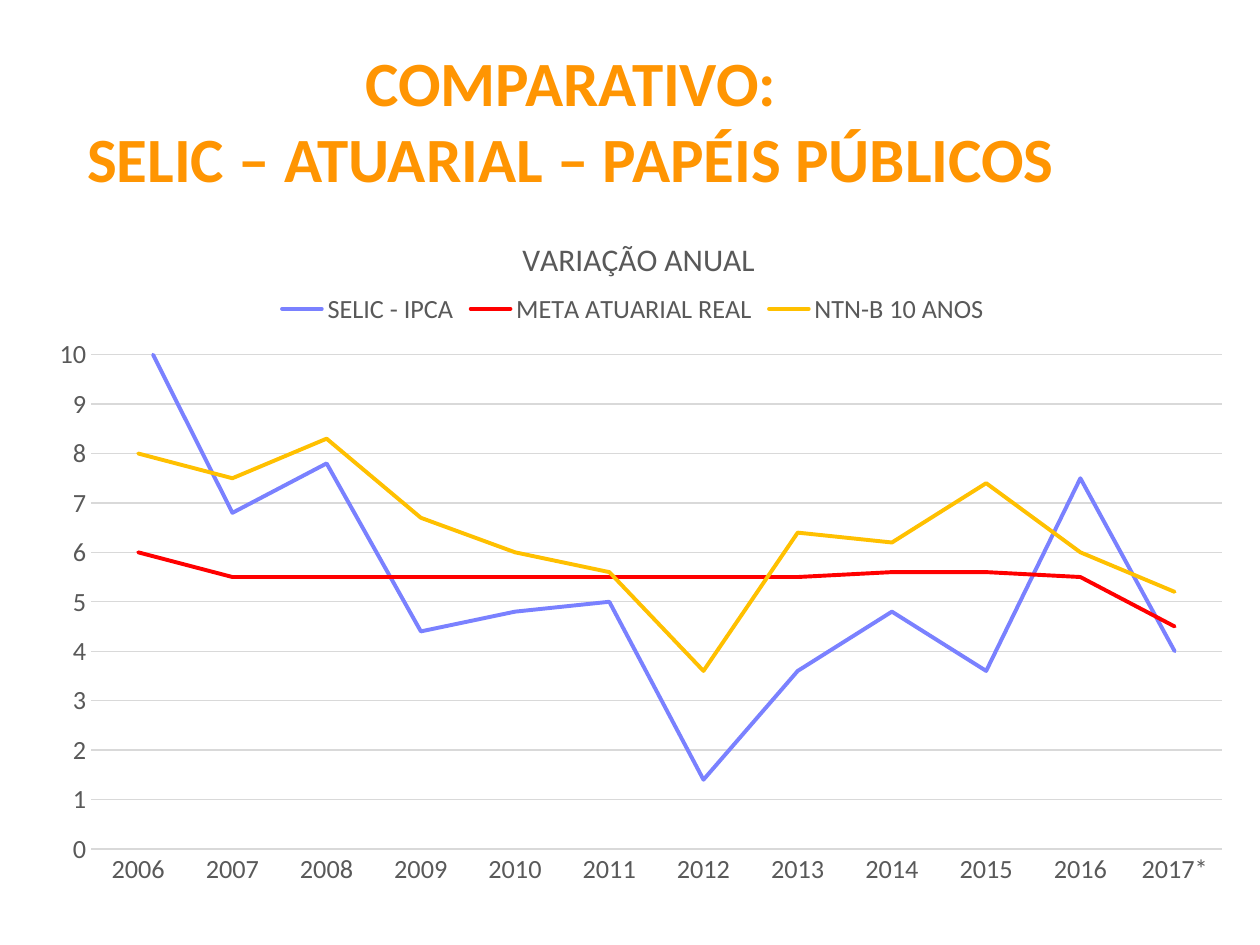
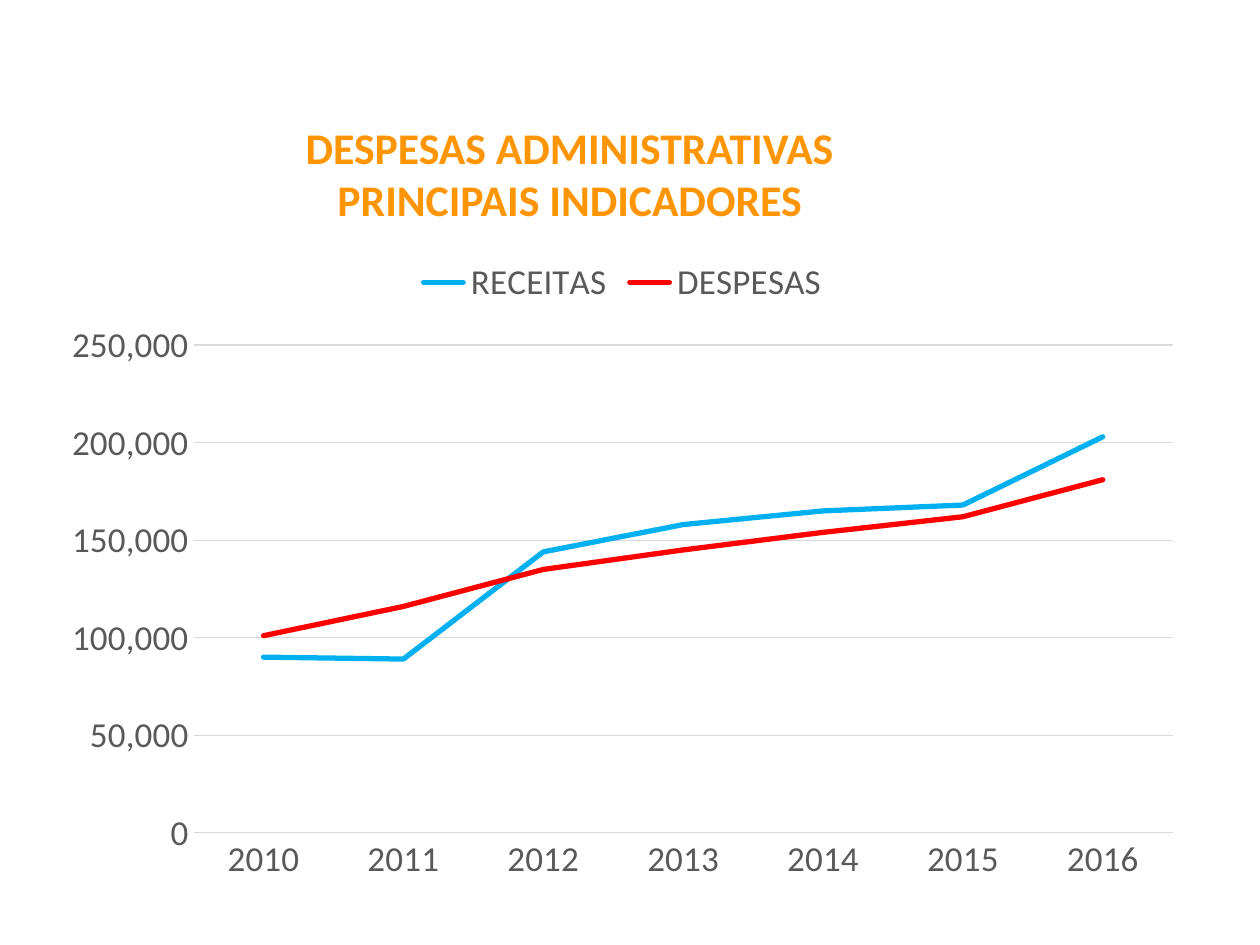
from dataclasses import dataclass

from lxml import etree
from pptx import Presentation
from pptx.chart.data import CategoryChartData
from pptx.dml.color import RGBColor
from pptx.enum.chart import XL_CHART_TYPE, XL_LEGEND_POSITION, XL_MARKER_STYLE, XL_TICK_MARK
from pptx.enum.text import MSO_ANCHOR, MSO_AUTO_SIZE, PP_ALIGN
from pptx.oxml.ns import qn
from pptx.util import Pt

LINE, TOP = XL_CHART_TYPE.LINE, XL_LEGEND_POSITION.TOP
NO_MARKER, NO_TICK = XL_MARKER_STYLE.NONE, XL_TICK_MARK.NONE
MIDDLE, CENTER, NO_FIT = MSO_ANCHOR.MIDDLE, PP_ALIGN.CENTER, MSO_AUTO_SIZE.NONE
TITLE_ONLY = 5


@dataclass(frozen=True)
class Theme:
    font: str = "Calibri"
    title: str = "FF9502"
    label: str = "595959"
    grid: str = "D9D9D9"
    lilac: str = "7A81FF"
    red: str = "FF0000"
    gold: str = "FFC000"
    blue: str = "00B0F0"
    hairline: float = 0.75
    chart_title_size: int = 18


THEME = Theme()

# Boxes are left, top, width, height in points; chart parts are shares of the chart.
SLIDES = [
    {
        "title": ["COMPARATIVO:", "SELIC – ATUARIAL – PAPÉIS PÚBLICOS"],
        "title_size": 36,
        "title_box": (17.3, 35.3, 617.8, 65.5),
        "chart_box": (17.3, 112.3, 694.8, 401.8),
        "chart_title": "VARIAÇÃO ANUAL",
        "chart_title_at": (0.4, 0.05),
        "legend_at": (0.2, 0.13),
        "plot_at": (0.05, 0.225, 0.93, 0.703),
        "label_size": 15,
        "line_width": 2.25,
        "scale": (10, 1, "General"),
        "categories": [str(year) for year in range(2006, 2017)] + ["2017*"],
        "series": [
            ("SELIC - IPCA", THEME.lilac,
             [10.6, 6.8, 7.8, 4.4, 4.8, 5, 1.4, 3.6, 4.8, 3.6, 7.5, 4]),
            ("META ATUARIAL REAL", THEME.red,
             [6, 5.5, 5.5, 5.5, 5.5, 5.5, 5.5, 5.5, 5.6, 5.6, 5.5, 4.5]),
            ("NTN-B 10 ANOS", THEME.gold,
             [8, 7.5, 8.3, 6.7, 6, 5.6, 3.6, 6.4, 6.2, 7.4, 6, 5.2]),
        ],
    },
    {
        "title": ["DESPESAS ADMINISTRATIVAS", "PRINCIPAIS INDICADORES"],
        "title_size": 25,
        "title_box": (16.6, 66.2, 617.8, 65.5),
        "chart_box": (28.1, 139.7, 655.2, 371.5),
        "plot_at": (0.126, 0.155, 0.854, 0.75),
        "label_size": 20,
        "line_width": 3,
        "scale": (250000, 50000, "#,##0"),
        "categories": [str(year) for year in range(2010, 2017)],
        "series": [
            ("RECEITAS", THEME.blue,
             [90000, 89000, 144000, 158000, 165000, 168000, 203000]),
            ("DESPESAS", THEME.red,
             [101000, 116000, 135000, 145000, 154000, 162000, 181000]),
        ],
    },
]


def style_font(font, size, color, bold=False):
    font.name, font.size, font.bold = THEME.font, Pt(size), bold
    font.color.rgb = RGBColor.from_string(color)


def style_line(line, color, width):
    line.color.rgb = RGBColor.from_string(color)
    line.width = Pt(width)


def place_part(element, index, shares, inner=False):
    """Give a chart part a manual layout, as shares of the chart's size."""
    for old in element.findall(qn("c:layout")):
        element.remove(old)
    layout = etree.Element(qn("c:layout"))
    manual = etree.SubElement(layout, qn("c:manualLayout"))
    settings = [("layoutTarget", "inner")] if inner else []
    settings += [("xMode", "edge"), ("yMode", "edge")]
    settings += zip("xywh", shares)
    for name, value in settings:
        etree.SubElement(manual, qn("c:" + name)).set("val", str(value))
    element.insert(index, layout)


def add_title(slide, content):
    sp = slide.shapes.title
    sp.left, sp.top, sp.width, sp.height = map(Pt, content["title_box"])
    tf = sp.text_frame
    tf.text = "\n".join(content["title"])
    tf.word_wrap, tf.auto_size, tf.vertical_anchor = True, NO_FIT, MIDDLE
    for p in tf.paragraphs:
        p.alignment = CENTER
        for r in p.runs:
            style_font(r.font, content["title_size"], THEME.title, bold=True)


def style_axes(chart, content):
    maximum, step, number_format = content["scale"]
    values, categories = chart.value_axis, chart.category_axis
    for axis in (values, categories):
        axis.major_tick_mark = axis.minor_tick_mark = NO_TICK
        style_font(axis.tick_labels.font, content["label_size"], THEME.label)
    values.minimum_scale, values.maximum_scale, values.major_unit = 0, maximum, step
    values.tick_labels.number_format = number_format
    values.tick_labels.number_format_is_linked = False
    values.format.line.fill.background()
    for line in (values.major_gridlines.format.line, categories.format.line):
        style_line(line, THEME.grid, THEME.hairline)


def add_line_chart(slide, content):
    data = CategoryChartData()
    data.categories = content["categories"]
    for name, _, values in content["series"]:
        data.add_series(name, values)
    chart = slide.shapes.add_chart(LINE, *map(Pt, content["chart_box"]), data).chart
    style_font(chart.font, content["label_size"], THEME.label)

    plot = chart.plots[0]
    plot.vary_by_categories = False
    for series, (_, color, _) in zip(plot.series, content["series"]):
        series.smooth = False
        series.marker.style = NO_MARKER
        style_line(series.format.line, color, content["line_width"])
        for ln in series._element.xpath("c:spPr/a:ln"):
            ln.set("cap", "rnd")
    style_axes(chart, content)
    place_part(chart._chartSpace.chart.plotArea, 0, content["plot_at"], inner=True)

    chart.has_legend = True
    legend = chart.legend
    legend.position, legend.include_in_layout = TOP, False
    style_font(legend.font, content["label_size"], THEME.label)
    if "legend_at" in content:
        place_part(legend._element, 1, content["legend_at"])

    chart.has_title = "chart_title" in content
    if chart.has_title:
        p = chart.chart_title.text_frame.paragraphs[0]
        p.text = content["chart_title"]
        style_font(p.runs[0].font, THEME.chart_title_size, THEME.label)
        place_part(chart.chart_title._element, 1, content["chart_title_at"])


def main():
    prs = Presentation()
    prs.slide_width, prs.slide_height = Pt(720), Pt(540)
    for content in SLIDES:
        slide = prs.slides.add_slide(prs.slide_layouts[TITLE_ONLY])
        add_title(slide, content)
        add_line_chart(slide, content)
    prs.save("out.pptx")


if __name__ == "__main__":
    main()
